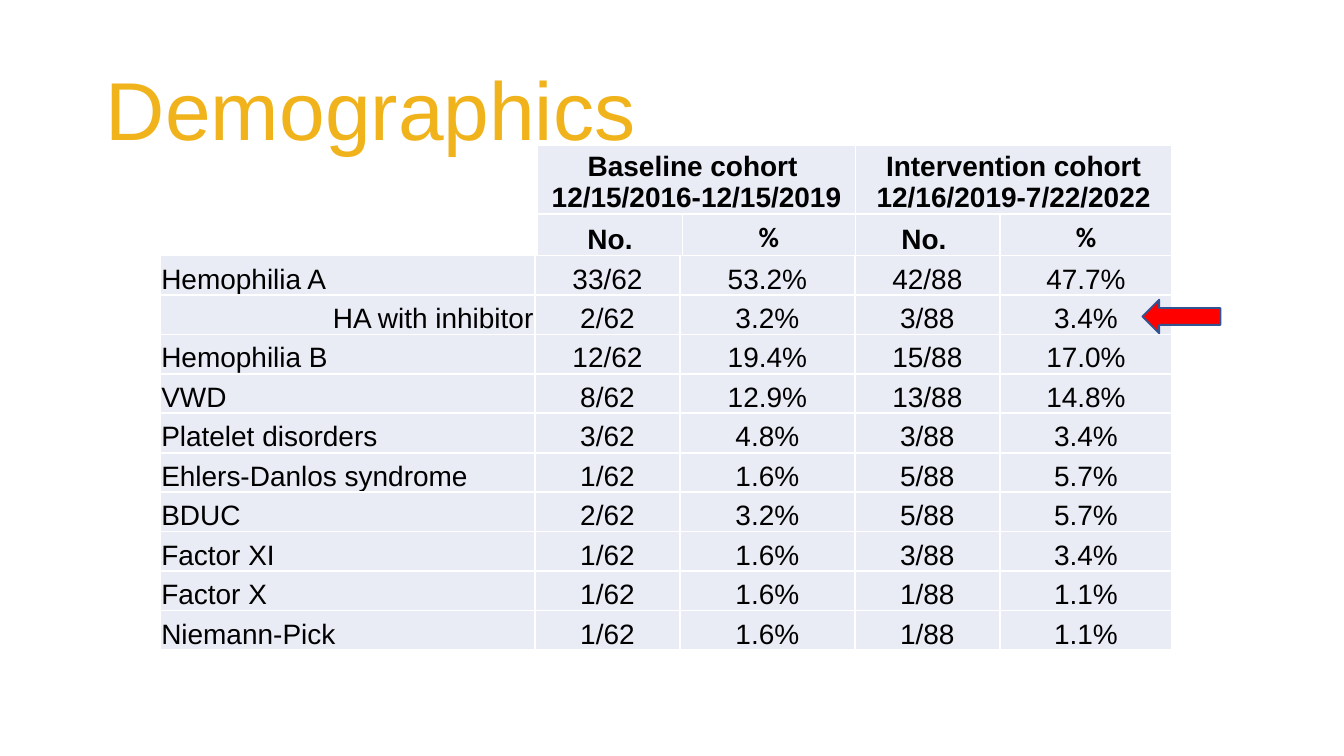
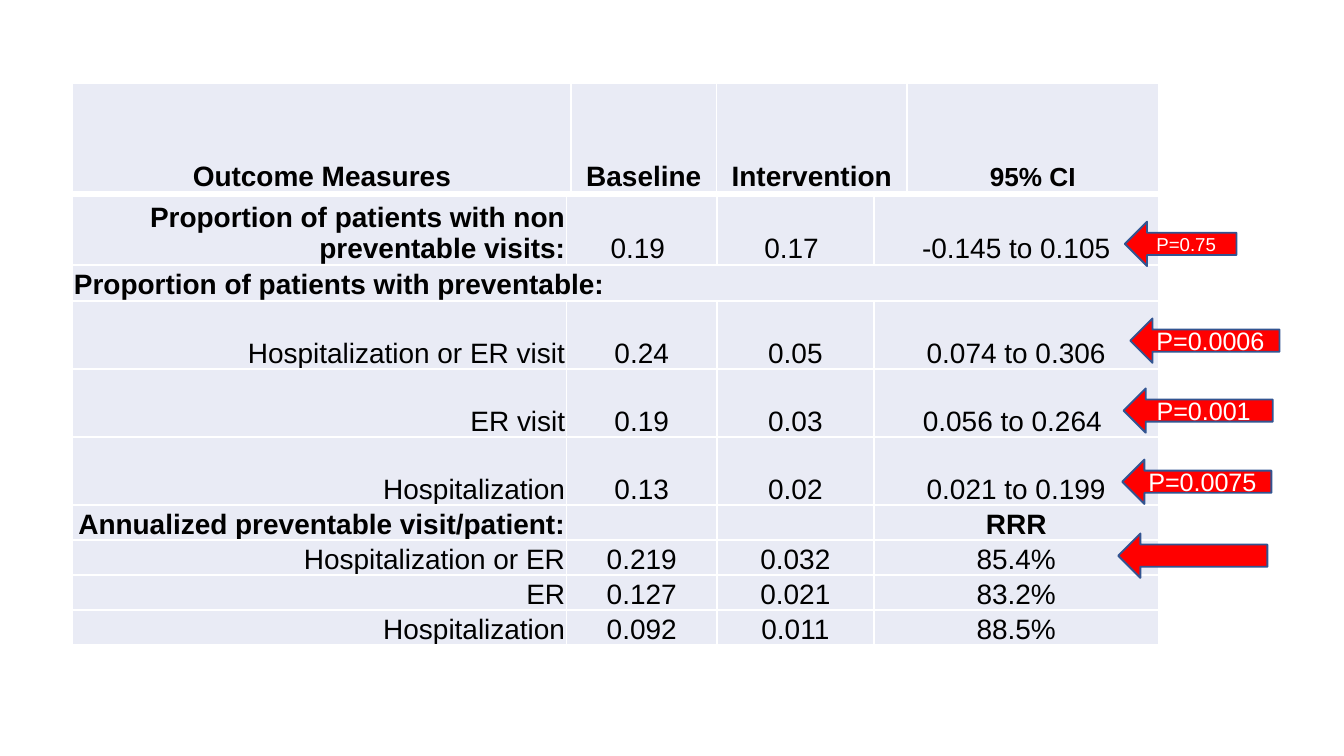
from lxml import etree
from pptx import Presentation
from pptx import util as u
from pptx.dml.color import RGBColor
from pptx.enum import shapes, text
from pptx.oxml import ns

COLORS = {
    "title": "F0B31C",
    "cell": "E9EBF5",
    "text": "000000",
    "white": "FFFFFF",
    "arrow": "FF0000",
    "outline": "325491",
}
FONT = "Arial"
TABLE_SIZE = 15
LEFT, CENTER, RIGHT = text.PP_ALIGN.LEFT, text.PP_ALIGN.CENTER, text.PP_ALIGN.RIGHT

DEMOGRAPHICS = [
    ("Hemophilia A", "33/62", "53.2%", "42/88", "47.7%"),
    ("HA with inhibitor", "2/62", "3.2%", "3/88", "3.4%"),
    ("Hemophilia B", "12/62", "19.4%", "15/88", "17.0%"),
    ("VWD", "8/62", "12.9%", "13/88", "14.8%"),
    ("Platelet disorders", "3/62", "4.8%", "3/88", "3.4%"),
    ("Ehlers-Danlos syndrome", "1/62", "1.6%", "5/88", "5.7%"),
    ("BDUC", "2/62", "3.2%", "5/88", "5.7%"),
    ("Factor XI", "1/62", "1.6%", "3/88", "3.4%"),
    ("Factor X", "1/62", "1.6%", "1/88", "1.1%"),
    ("Niemann-Pick", "1/62", "1.6%", "1/88", "1.1%"),
]
COHORTS = [
    ("Baseline cohort \n12/15/2016-12/15/2019", "",
     "Intervention cohort 12/16/2019-7/22/2022", ""),
    ("No.", "%", "No. ", "%"),
]
OUTCOME_HEADER = [("Outcome Measures", "Baseline", "Intervention", "95% CI")]
OUTCOMES = [
    ("Proportion of patients with non preventable visits:", "0.19 ", "0.17 ", "-0.145 to 0.105"),
    ("Proportion of patients with preventable:", "", "", ""),
    ("Hospitalization or ER visit", "0.24", "0.05", "0.074 to 0.306"),
    ("ER visit", "0.19", "0.03", "0.056 to 0.264 "),
    ("Hospitalization", "0.13", "0.02", "0.021 to 0.199"),
    ("Annualized preventable visit/patient:", "", "", "RRR"),
    ("Hospitalization or ER", "0.219", "0.032", "85.4%"),
    ("ER", "0.127", "0.021", "83.2%"),
    ("Hospitalization", "0.092", "0.011", "88.5%"),
]
P_VALUES = [
    (8.37, 1.65, 0.83, "P=0.75", 10),
    (8.35, 3.42, 1.11, "P=0.0075", 13.5),
    (8.41, 2.37, 1.11, "P=0.0006", 13.5),
    (8.36, 2.89, 1.11, "P=0.001", 13.5),
    (8.32, 3.97, 1.11, "", 13.5),
]


def rgb(name):
    return RGBColor.from_string(COLORS[name])


def format_text(frame, size, color, align, bold=False):
    for para in frame.paragraphs:
        para.alignment = align
        for span in para.runs:
            span.font.size = u.Pt(size)
            span.font.name = FONT
            span.font.bold = bold
            span.font.color.rgb = rgb(color)


def add_title(page, title):
    box = page.shapes.add_textbox(u.Inches(0.69), u.Inches(0.3), u.Inches(8.62), u.Inches(1.09))
    frame = box.text_frame
    frame.word_wrap = True
    frame.vertical_anchor = text.MSO_ANCHOR.MIDDLE
    frame.text = title
    frame.paragraphs[0].line_spacing = 0.9
    format_text(frame, 44, "title", LEFT)


def add_borders(cell):
    properties = cell._tc.get_or_add_tcPr()
    for index, side in enumerate(("a:lnL", "a:lnR", "a:lnT", "a:lnB")):
        line = etree.Element(ns.qn(side), w=str(u.Pt(1)))
        fill = etree.SubElement(line, ns.qn("a:solidFill"))
        etree.SubElement(fill, ns.qn("a:srgbClr"), val=COLORS["white"])
        properties.insert(index, line)


def fill_cell(cell, content, align, bold):
    cell.margin_left = cell.margin_right = cell.margin_top = u.Inches(0.01)
    cell.margin_bottom = 0
    cell.vertical_anchor = text.MSO_ANCHOR.BOTTOM
    cell.fill.solid()
    cell.fill.fore_color.rgb = rgb("cell")
    add_borders(cell)
    if content:
        cell.text_frame.text = content
        format_text(cell.text_frame, TABLE_SIZE, "text", align, bold)
    else:
        # Keeps the default size of an empty cell from stretching its row.
        para = cell.text_frame.paragraphs[0]
        etree.SubElement(para._p, ns.qn("a:endParaRPr"), sz=str(TABLE_SIZE * 100))


def share(total, parts):
    """Split a total length in the proportions of the parts."""
    return [total * part / sum(parts) for part in parts]


def add_table(page, left, top, widths, heights, rows, label_align=CENTER,
              bold_cells=(), aligned=None, merged=()):
    """Draw rows; aligned maps a row to its label alignment, merged lists (row, first, last)."""
    aligned = aligned or {}
    table = page.shapes.add_table(
        len(heights), len(widths), u.Inches(left), u.Inches(top),
        u.Inches(sum(widths)), u.Inches(sum(heights))).table
    table.first_row = table.horz_banding = False
    for column, width in zip(table.columns, widths):
        column.width = u.Inches(width)
    for row, height in zip(table.rows, heights):
        row.height = u.Inches(height)
    for r, row in enumerate(rows):
        for c, content in enumerate(row):
            align = CENTER if c else aligned.get(r, label_align)
            fill_cell(table.cell(r, c), content, align, (r, c) in bold_cells)
    for r, first, last in merged:
        table.cell(r, first).merge(table.cell(r, last))
    return table


def add_arrow(page, left, top, width, height, label="", size=13.5):
    arrow = page.shapes.add_shape(
        shapes.MSO_SHAPE.LEFT_ARROW, u.Inches(left), u.Inches(top),
        u.Inches(width), u.Inches(height))
    arrow.shadow.inherit = False
    arrow.fill.solid()
    arrow.fill.fore_color.rgb = rgb("arrow")
    arrow.line.color.rgb = rgb("outline")
    arrow.line.width = u.Pt(1)
    if label:
        frame = arrow.text_frame
        frame.word_wrap = False
        frame.vertical_anchor = text.MSO_ANCHOR.MIDDLE
        frame.text = label
        format_text(frame, size, "white", CENTER)


def all_cells(rows):
    return {(r, c) for r, row in enumerate(rows) for c in range(len(row))}


def build_demographics(page):
    add_title(page, "Demographics")
    add_table(page, 1.19, 1.9, [2.79, 1.08, 1.3, 1.08, 1.28],
              share(2.94, [1] * len(DEMOGRAPHICS)), DEMOGRAPHICS,
              label_align=LEFT, aligned={1: RIGHT})
    cohorts = add_table(page, 4, 1.08, share(4.72, [1.08, 1.29, 1.08, 1.28]),
                        [0.51, 0.31], COHORTS, bold_cells=all_cells(COHORTS),
                        merged=[(0, 0, 1), (0, 2, 3)])
    for column in (1, 3):
        cohorts.cell(1, column).text_frame.paragraphs[0].runs[0].font.name = "Calibri"
    add_arrow(page, 8.5, 2.23, 0.58, 0.25)


def build_outcomes(page):
    add_table(page, 0.54, 1.46, share(8.08, [3.68, 1.12, 1.17, 2.12]),
              share(3.33, [0.51, 0.27] + [0.51] * 3 + [0.26] * 4), OUTCOMES,
              label_align=RIGHT, bold_cells={(0, 0), (1, 0), (5, 0), (5, 3)},
              aligned={1: LEFT}, merged=[(1, 0, 3)])
    header = add_table(page, 0.54, 0.62, [3.71, 1.08, 1.42, 1.87], [0.81], OUTCOME_HEADER,
                       bold_cells=all_cells(OUTCOME_HEADER))
    header.cell(0, 3).text_frame.paragraphs[0].runs[0].font.size = u.Pt(14)
    for left, top, width, label, size in P_VALUES:
        add_arrow(page, left, top, width, 0.33, label, size)


def main():
    deck = Presentation()
    deck.slide_width = u.Inches(10)
    deck.slide_height = deck.slide_width * 9 // 16
    for build in (build_demographics, build_outcomes):
        build(deck.slides.add_slide(deck.slide_layouts[6]))
    deck.save("out.pptx")


if __name__ == "__main__":
    main()
